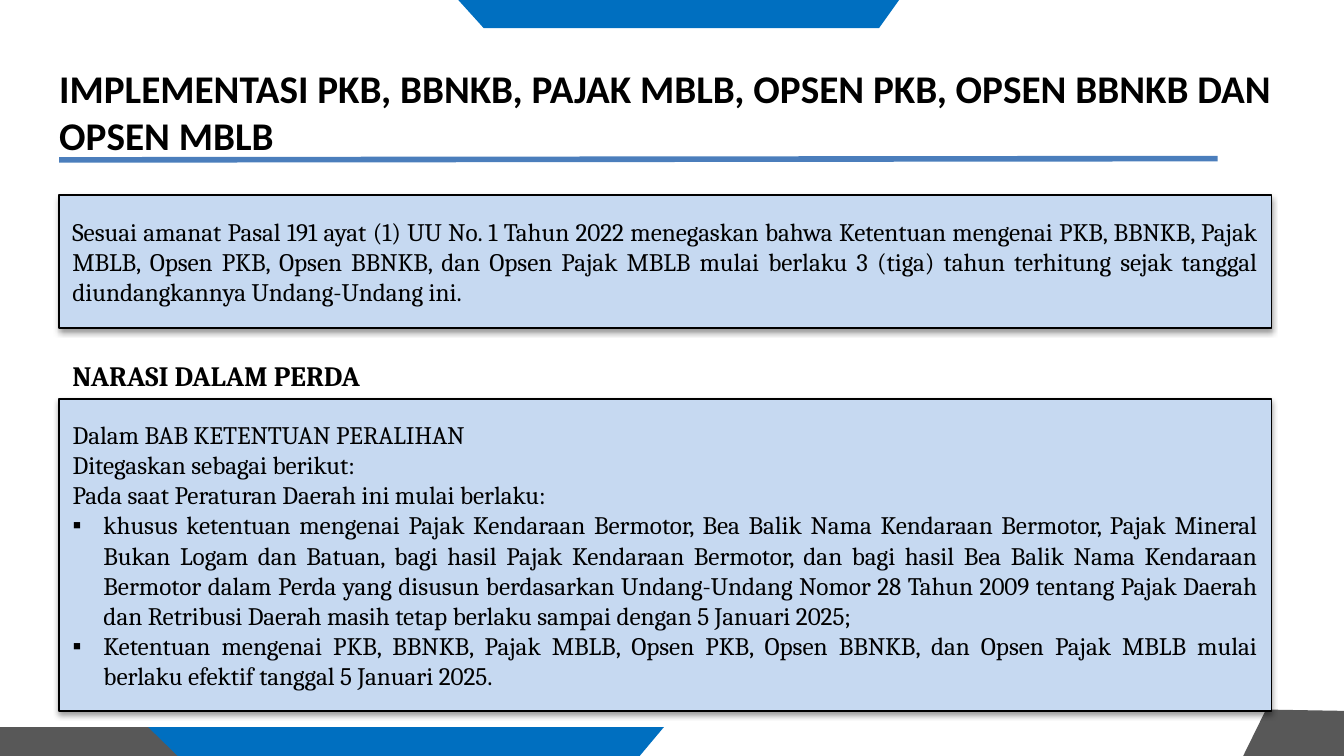
from typing import NamedTuple

from lxml import etree
from pptx import Presentation
from pptx.dml.color import RGBColor
from pptx.enum import shapes, text
from pptx.oxml import parse_xml
from pptx.oxml.ns import nsdecls, qn
from pptx.util import Inches, Pt

BLACK = RGBColor(0, 0, 0)
BLUE = RGBColor(0x00, 0x6F, 0xC0)
GREY = RGBColor(0x58, 0x58, 0x58)
RULE_BLUE = RGBColor(0x4B, 0x7E, 0xBC)
PANEL_BLUE = RGBColor(0xC6, 0xD9, 0xF1)

LEFT, PANEL_WIDTH, BULLET_INDENT = 0.44, 9.02, 0.23
SLIDE_WIDTH = 10
SLIDE_HEIGHT = SLIDE_WIDTH * 9 / 16


class Ornament(NamedTuple):
    color: RGBColor
    points: list[tuple[float, float]]


class Line(NamedTuple):
    text: str
    bullet: bool = False


ORNAMENTS = [
    Ornament(BLUE, [(6.69, 0), (3.41, 0), (3.6, 0.21), (6.54, 0.21)]),
    Ornament(BLUE, [(4.94, 5.41), (0.89, 5.41), (0.89, SLIDE_HEIGHT), (4.76, SLIDE_HEIGHT)]),
    Ornament(GREY, [(1.1, 5.41), (0, 5.41), (0, SLIDE_HEIGHT), (1.32, SLIDE_HEIGHT)]),
    Ornament(GREY, [(9.42, 5.28), (9.25, SLIDE_HEIGHT), (SLIDE_WIDTH, SLIDE_HEIGHT),
                    (SLIDE_WIDTH, 5.29)]),
]

TITLE = "IMPLEMENTASI PKB, BBNKB, PAJAK MBLB, OPSEN PKB, OPSEN BBNKB DAN OPSEN MBLB"
SUBHEADING = "NARASI DALAM PERDA"
MANDATE = [
    Line("Sesuai amanat Pasal 191 ayat (1) UU No. 1 Tahun 2022 menegaskan bahwa Ketentuan "
         "mengenai PKB, BBNKB, Pajak MBLB, Opsen PKB, Opsen BBNKB, dan Opsen Pajak MBLB mulai "
         "berlaku 3 (tiga) tahun terhitung sejak tanggal diundangkannya Undang-Undang ini."),
]
TRANSITION = [
    Line("Dalam BAB KETENTUAN PERALIHAN"),
    Line("Ditegaskan sebagai berikut:"),
    Line("Pada saat Peraturan Daerah ini mulai berlaku:"),
    Line("khusus ketentuan mengenai Pajak Kendaraan Bermotor, Bea Balik Nama Kendaraan Bermotor, "
         "Pajak Mineral Bukan Logam dan Batuan, bagi hasil Pajak Kendaraan Bermotor, dan bagi "
         "hasil Bea Balik Nama Kendaraan Bermotor dalam Perda yang disusun berdasarkan "
         "Undang-Undang Nomor 28 Tahun 2009 tentang Pajak Daerah dan Retribusi Daerah masih "
         "tetap berlaku sampai dengan 5 Januari 2025;", bullet=True),
    Line("Ketentuan mengenai PKB, BBNKB, Pajak MBLB, Opsen PKB, Opsen BBNKB, dan Opsen Pajak "
         "MBLB mulai berlaku efektif tanggal 5 Januari 2025.", bullet=True),
]


def place(sp, left: float, top: float, width: float, height: float) -> None:
    sp.left, sp.top = Inches(left), Inches(top)
    sp.width, sp.height = Inches(width), Inches(height)


def style_text(p, name: str, size: float, bold: bool = False) -> None:
    for r in p.runs:
        r.font.name, r.font.size, r.font.bold = name, Pt(size), bold
        r.font.color.rgb = BLACK


def set_bullet(p, bullet: bool) -> None:
    """Give the paragraph a square bullet with a hanging indent, or neither."""
    pPr = p._p.get_or_add_pPr()
    indent = Inches(BULLET_INDENT) if bullet else 0
    pPr.set("marL", str(indent))
    pPr.set("indent", str(-indent))
    if bullet:
        etree.SubElement(pPr, qn("a:buChar")).set("char", "▪")
    else:
        etree.SubElement(pPr, qn("a:buNone"))


def add_soft_shadow(sp) -> None:
    sp._element.spPr.append(parse_xml(
        f'<a:effectLst {nsdecls("a")}>'
        f'<a:outerShdw blurRad="{Pt(3.1)}" dist="{Pt(1.6)}" dir="5400000" rotWithShape="0">'
        '<a:srgbClr val="000000"><a:alpha val="38000"/></a:srgbClr>'
        '</a:outerShdw></a:effectLst>'))


def draw_ornament(s, ornament: Ornament) -> None:
    (start, *rest) = [(Inches(x), Inches(y)) for x, y in ornament.points]
    builder = s.shapes.build_freeform(*start, scale=1.0)
    builder.add_line_segments(rest, close=True)
    sp = builder.convert_to_shape()
    sp.shadow.inherit = False
    sp.fill.solid()
    sp.fill.fore_color.rgb = ornament.color
    sp.line.fill.background()


def format_panel(sp, top: float, height: float, lines: list[Line]) -> None:
    place(sp, LEFT, top, PANEL_WIDTH, height)
    sp.fill.solid()
    sp.fill.fore_color.rgb = PANEL_BLUE
    sp.line.color.rgb = BLACK
    sp.line.width = Pt(0.75)
    add_soft_shadow(sp)
    tf = sp.text_frame
    tf.word_wrap = True
    tf.auto_size = text.MSO_AUTO_SIZE.NONE
    tf.vertical_anchor = text.MSO_ANCHOR.MIDDLE
    tf.text = "\n".join(line.text for line in lines)
    for p, line in zip(tf.paragraphs, lines):
        p.alignment = text.PP_ALIGN.JUSTIFY
        p.space_before = Pt(0)
        set_bullet(p, line.bullet)
        style_text(p, "Cambria", 13.5)


def format_title(sp) -> None:
    place(sp, LEFT, 0.48, 9.08, 0.71)
    tf = sp.text_frame
    tf.margin_left = tf.margin_right = tf.margin_top = tf.margin_bottom = 0
    tf.auto_size = text.MSO_AUTO_SIZE.NONE
    tf.vertical_anchor = text.MSO_ANCHOR.TOP
    tf.text = TITLE
    p = tf.paragraphs[0]
    p.alignment = text.PP_ALIGN.LEFT
    style_text(p, "Calibri", 21, bold=True)


def add_title_rule(s) -> None:
    rule = s.shapes.add_connector(shapes.MSO_CONNECTOR.STRAIGHT, Inches(LEFT), Inches(1.19),
                                  Inches(9.06), Inches(1.18))
    rule.line.color.rgb = RULE_BLUE
    rule.line.width = Pt(3)
    etree.SubElement(rule._element.spPr, qn("a:effectLst"))


def add_subheading(s) -> None:
    sp = s.shapes.add_textbox(Inches(LEFT), Inches(2.62), Inches(2.4), Inches(0.35))
    tf = sp.text_frame
    tf.word_wrap = False
    tf.text = SUBHEADING
    style_text(tf.paragraphs[0], "Cambria", 15, bold=True)


def main() -> None:
    prs = Presentation()
    prs.slide_width, prs.slide_height = Inches(SLIDE_WIDTH), Inches(SLIDE_HEIGHT)
    s = prs.slides.add_slide(prs.slide_layouts[1])
    title, body = s.placeholders
    for ornament in ORNAMENTS:
        draw_ornament(s, ornament)
    for sp in (title, body):  # bring the text in front of the ornaments
        s.shapes._spTree.append(sp._element)

    format_title(title)
    add_title_rule(s)
    mandate = s.shapes.add_shape(shapes.MSO_SHAPE.RECTANGLE, 0, 0, 0, 0)
    format_panel(mandate, 1.45, 0.99, MANDATE)
    format_panel(body, 2.97, 2.32, TRANSITION)
    add_subheading(s)
    prs.save("out.pptx")


if __name__ == "__main__":
    main()
